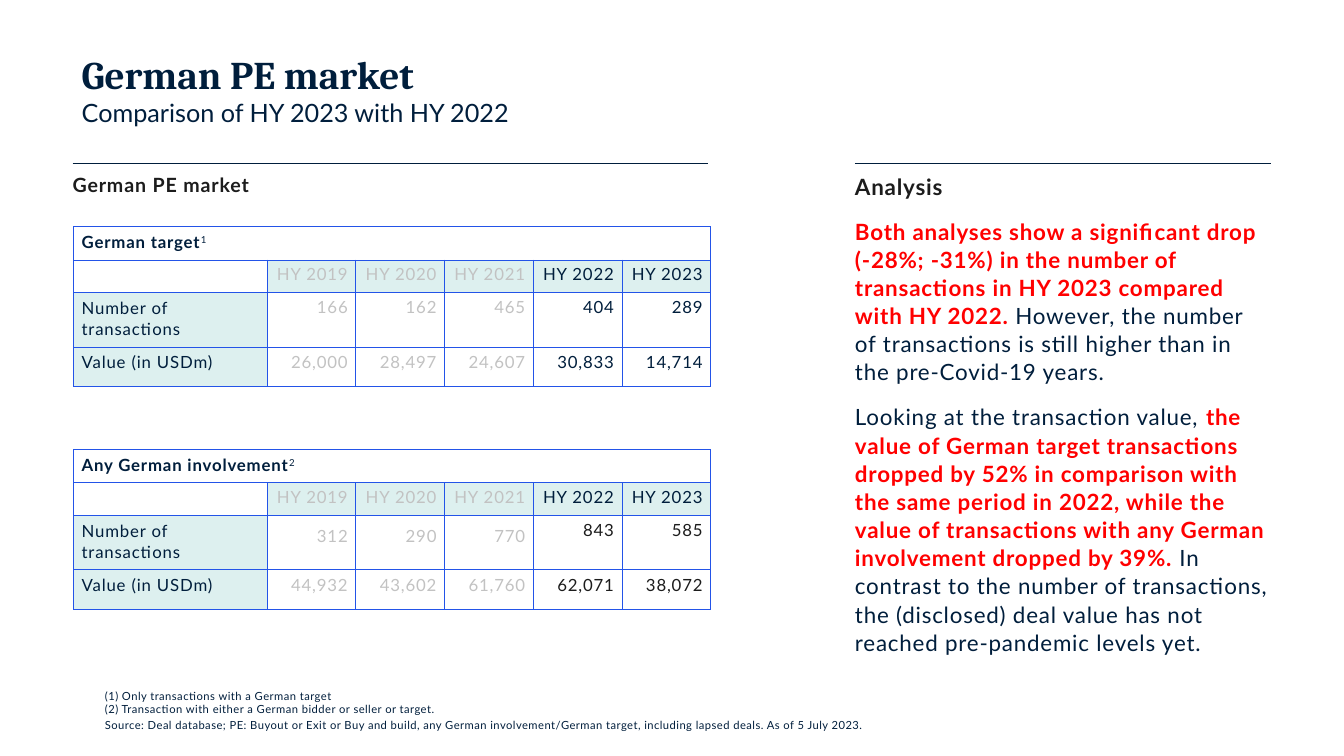
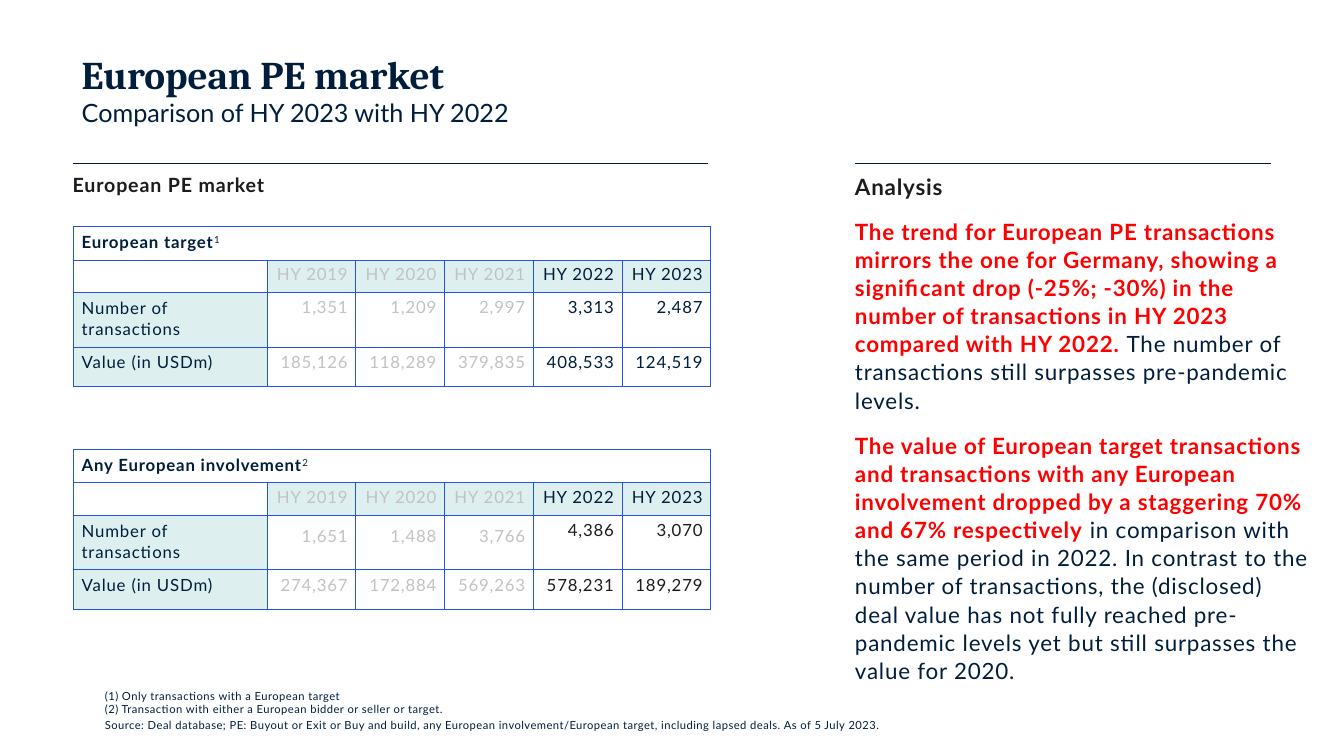
"""Build two slides comparing private equity markets in HY 2023 and HY 2022."""
from lxml import etree
from pptx import Presentation
from pptx.dml.color import RGBColor
from pptx.enum.shapes import MSO_CONNECTOR
from pptx.enum.text import MSO_ANCHOR, MSO_AUTO_SIZE, PP_ALIGN
from pptx.oxml import parse_xml
from pptx.oxml.ns import nsdecls, qn
from pptx.util import Inches, Pt

LEFT, RIGHT = PP_ALIGN.LEFT, PP_ALIGN.RIGHT
TOP, MIDDLE, BOTTOM = MSO_ANCHOR.TOP, MSO_ANCHOR.MIDDLE, MSO_ANCHOR.BOTTOM
STRAIGHT = MSO_CONNECTOR.STRAIGHT
NO_AUTOFIT = MSO_AUTO_SIZE.NONE

NAVY, BLACK, GREY = "001E3C", "1C1C1C", "C2C2C2"
RED, MINT, BLUE = "FF0000", "DDF0EF", "2354E8"
SERIF, SANS = "Cambria", "Lato"

RULE_TOP = 1.62
LEFT_EDGE, ANALYSIS_LEFT = 0.72, 8.48
COLUMN_WIDTHS = [1.92] + [0.88] * 5
ROW_HEIGHTS = [0.33, 0.32, 0.54, 0.39]
YEARS = ["", "HY 2019", "HY 2020", "HY 2021", "HY 2022", "HY 2023"]
FIRST_DARK_COLUMN = 4
SUBTITLE = "Comparison of HY 2023 with HY 2022"

MARKETS = [
    {
        "name": "German",
        "analysis_width": 4.13,
        "target": [["166", "162", "465", "404", "289"],
                   ["26,000", "28,497", "24,607", "30,833", "14,714"]],
        "involvement": [["312", "290", "770", "843", "585"],
                        ["44,932", "43,602", "61,760", "62,071", "38,072"]],
        "analysis": [
            [("Both analyses show a significant drop (-28%; -31%) in the number of "
              "transactions in HY 2023 compared with HY 2022. ", True),
             ("However, the number of transactions is still higher than in the "
              "pre-Covid-19 years.", False)],
            [("Looking at the transaction value, ", False),
             ("the value of German target transactions dropped by 52% in comparison "
              "with the same period in 2022, while the value of transactions with any "
              "German involvement dropped by 39%. ", True),
             ("In contrast to the number of transactions, the (disclosed) deal value "
              "has not reached pre-pandemic levels yet.", False)],
        ],
    },
    {
        "name": "European",
        "analysis_width": 4.51,
        "target": [["1,351", "1,209", "2,997", "3,313", "2,487"],
                   ["185,126", "118,289", "379,835", "408,533", "124,519"]],
        "involvement": [["1,651", "1,488", "3,766", "4,386", "3,070"],
                        ["274,367", "172,884", "569,263", "578,231", "189,279"]],
        "analysis": [
            [("The trend for European PE transactions mirrors the one for Germany, "
              "showing a significant drop (-25%; -30%) in the number of transactions "
              "in HY 2023 compared with HY 2022. ", True),
             ("The number of transactions still surpasses pre-pandemic levels.", False)],
            [("The value of European target transactions and transactions with any "
              "European involvement dropped by a staggering 70% and 67% respectively",
              True),
             (" in comparison with the same period in 2022. In contrast to the number "
              "of transactions, the (disclosed) deal value has not fully reached "
              "pre-pandemic levels yet but still surpasses the value for 2020.", False)],
        ],
    },
]


def write(para, text, size=12, color=NAVY, bold=False, font=SANS, spacing=0.6,
          raised=False, align=LEFT, line=1.0, before=0, after=0):
    """Add one formatted span to a paragraph and set the paragraph's layout."""
    para.alignment, para.line_spacing = align, line
    para.space_before, para.space_after = Pt(before), Pt(after)
    span = para.add_run()
    span.text = text
    span.font.name, span.font.size, span.font.bold = font, Pt(size), bold
    span.font.color.rgb = RGBColor.from_string(color)
    properties = span.font._element
    properties.set("spc", str(round(spacing * 100)))
    if raised:
        properties.set("baseline", "30000")


def prepare(box, left, top, width, height, anchor=TOP, insets=(0, 0.08)):
    """Place a text shape, set its frame and return the frame."""
    box.left, box.top = Inches(left), Inches(top)
    box.width, box.height = Inches(width), Inches(height)
    frame = box.text_frame
    frame.word_wrap, frame.auto_size = True, NO_AUTOFIT
    frame.vertical_anchor = anchor
    frame.margin_left = frame.margin_right = Inches(insets[0])
    frame.margin_top = frame.margin_bottom = Inches(insets[1])
    return frame


deck = Presentation()
deck.slide_width, deck.slide_height = Inches(13.33), Inches(7.5)

for market in MARKETS:
    name = market["name"]
    page = deck.slides.add_slide(deck.slide_layouts[1])

    frame = prepare(page.shapes.title, LEFT_EDGE, 0.49, 11.89, 0.79, MIDDLE, (0.09, 0.04))
    write(frame.paragraphs[0], f"{name} PE market", size=28, font=SERIF, bold=True, spacing=0)
    write(frame.add_paragraph(), SUBTITLE, size=18, spacing=0)

    for start, end in [(LEFT_EDGE, 7.02), (ANALYSIS_LEFT, 12.61)]:
        rule = page.shapes.add_connector(
            STRAIGHT, Inches(start), Inches(RULE_TOP), Inches(end), Inches(RULE_TOP))
        rule.line.color.rgb = RGBColor.from_string(NAVY)
        rule.line.width = Pt(1)
        etree.SubElement(rule._element.spPr, qn("a:effectLst"))

    heading = page.shapes.add_textbox(0, 0, 0, 0)
    frame = prepare(heading, LEFT_EDGE, RULE_TOP, 5.59, 0.39)
    write(frame.paragraphs[0], f"{name} PE market", size=14, color=BLACK, bold=True, line=1.05)

    frame = prepare(page.placeholders[1], ANALYSIS_LEFT, RULE_TOP,
                    market["analysis_width"], 5.2)
    write(frame.paragraphs[0], "Analysis", size=16, color=BLACK, bold=True,
          line=1.05, after=4)
    for spans in market["analysis"]:
        para = frame.add_paragraph()
        for text, key_point in spans:
            write(para, text, size=16, color=RED if key_point else NAVY, bold=key_point,
                  line=1.05, before=8, after=4)
    for para in frame.paragraphs:
        properties = para._p.get_or_add_pPr()
        properties.set("marL", "0")
        properties.set("indent", "0")
        etree.SubElement(properties, qn("a:buNone"))

    tables = [
        (2.25, f"{name} target", "1", market["target"], NAVY, 1.0),
        (4.46, f"Any {name} involvement", "2", market["involvement"], BLACK, 1.3),
    ]
    for top, caption, note, (counts, values), dark, grey_line in tables:
        table = page.shapes.add_table(
            4, 6, Inches(0.73), Inches(top),
            Inches(sum(COLUMN_WIDTHS)), Inches(sum(ROW_HEIGHTS))).table
        table.first_row = table.horz_banding = False
        for column, width in zip(table.columns, COLUMN_WIDTHS):
            column.width = Inches(width)
        for row, height in zip(table.rows, ROW_HEIGHTS):
            row.height = Inches(height)
        table.cell(0, 0).merge(table.cell(0, 5))

        rows = [[caption] + [""] * 5, YEARS,
                ["Number of transactions"] + counts, ["Value (in USDm)"] + values]
        for r, texts in enumerate(rows):
            for c, text in enumerate(texts):
                cell = table.cell(r, c)
                cell.margin_left = cell.margin_right = cell.margin_bottom = Inches(0.08)
                cell.margin_top = Inches(0.04)
                para = cell.text_frame.paragraphs[0]
                is_grey = 0 < c < FIRST_DARK_COLUMN
                if text:
                    line = 1.05 if c == 0 or r == 3 else 1.0
                    if r == 2 and is_grey:
                        line = grey_line
                    color = GREY if is_grey else dark if c and r > 1 else NAVY
                    write(para, text, color=color, bold=r == 0, line=line,
                          align=RIGHT if c else LEFT)
                else:
                    etree.SubElement(para._p, qn("a:endParaRPr")).set("sz", "1200")
                if text and r and (r == 1 or c == 0):
                    cell.fill.solid()
                    cell.fill.fore_color.rgb = RGBColor.from_string(MINT)
                else:
                    cell.fill.background()
                for index, side in enumerate("LRTB"):
                    cell._tc.get_or_add_tcPr().insert(index, parse_xml(
                        f'<a:ln{side} {nsdecls("a")} w="{Pt(0.75)}"><a:solidFill>'
                        f'<a:srgbClr val="{BLUE}"/></a:solidFill></a:ln{side}>'))
        write(table.cell(0, 0).text_frame.paragraphs[0], note, raised=True, line=1.05)

    footnotes = [
        (6.82, 0.28, [f"(1) Only transactions with a {name} target",
                      f"(2) Transaction with either a {name} bidder or seller or target."]),
        (7.1, 0.16, ["Source: Deal database; PE: Buyout or Exit or Buy and build, "
                     f"any {name} involvement/{name} target, including lapsed deals. "
                     "As of 5 July 2023."]),
    ]
    for top, height, lines in footnotes:
        frame = prepare(page.shapes.add_textbox(0, 0, 0, 0), 1.04, top, 9.02, height,
                        BOTTOM, (0, 0))
        for index, text in enumerate(lines):
            para = frame.add_paragraph() if index else frame.paragraphs[0]
            write(para, text, size=8, spacing=0.3)

deck.save("out.pptx")
